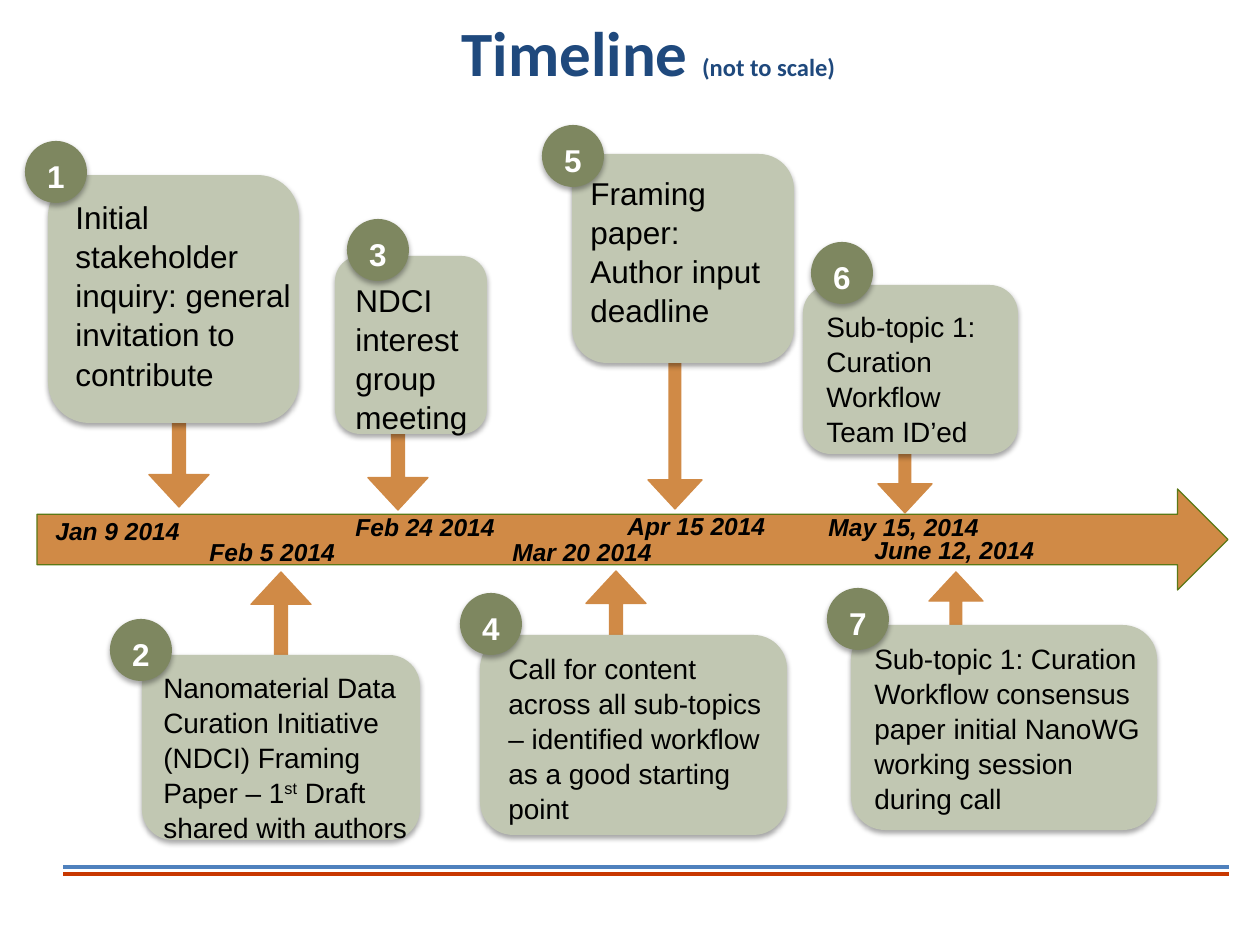
"""Build the project timeline slide."""
from lxml import etree
from pptx import Presentation
from pptx.dml.color import RGBColor
from pptx.enum.shapes import MSO_CONNECTOR, MSO_SHAPE
from pptx.enum.text import MSO_ANCHOR, PP_ALIGN
from pptx.oxml.ns import qn
from pptx.util import Pt

PX = 914400 / 126
DOWN, RIGHT = MSO_SHAPE.DOWN_ARROW, MSO_SHAPE.RIGHT_ARROW
ROUNDED, OVAL = MSO_SHAPE.ROUNDED_RECTANGLE, MSO_SHAPE.OVAL
MIDDLE, CENTER, LEFT = MSO_ANCHOR.MIDDLE, PP_ALIGN.CENTER, PP_ALIGN.LEFT
COLORS = {
    "navy": "1F497D", "blue": "4F81BD", "red": "C83801", "orange": "D08A46",
    "green": "5B7816", "card": "C1C7B2", "badge": "7E8760",
    "black": "000000", "white": "FFFFFF",
}


def add_shape(kind, box, fill, line=None):
    s = shapes.add_shape(kind, *[round(v * PX) for v in box])
    s.shadow.inherit = False
    s.fill.solid()
    s.fill.fore_color.rgb = RGBColor.from_string(COLORS[fill])
    if line:
        s.line.color.rgb = RGBColor.from_string(COLORS[line])
        s.line.width = Pt(0.75)
    else:
        s.line.fill.background()
        effects = s._element.spPr.find(qn("a:effectLst"))
        shadow = etree.SubElement(effects, qn("a:outerShdw"), blurRad="39370",
                                  dist="22860", dir="5400000", rotWithShape="0")
        color = etree.SubElement(shadow, qn("a:srgbClr"), val=COLORS["black"])
        etree.SubElement(color, qn("a:alpha"), val="35000")
    return s


def write(p, runs, size, color="black", bold=False, italic=False, align=LEFT):
    p.alignment = align
    p.line_spacing = 1.04
    for i, text in enumerate(runs):
        r = p.add_run()
        r.text = text
        r.font.name = "Arial"
        r.font.size = Pt(size)
        r.font.bold = bold
        r.font.italic = italic
        r.font.color.rgb = RGBColor.from_string(COLORS[color])
        if i == 1:
            r.font._element.set("baseline", "30000")


prs = Presentation()
prs.slide_width, prs.slide_height = round(1260 * PX), round(945 * PX)
slide = prs.slides.add_slide(prs.slide_layouts[5])
shapes = slide.shapes

for y, color in [(867, "blue"), (874, "red")]:
    s = shapes.add_connector(MSO_CONNECTOR.STRAIGHT, *[round(v * PX) for v in (63, y, 1229, y)])
    s.line.color.rgb = RGBColor.from_string(COLORS[color])
    s.line.width = Pt(2)
    etree.SubElement(s._element.spPr, qn("a:effectLst"))

title = shapes.title
title.left, title.top, title.width, title.height = [round(v * PX) for v in (92, 13, 1113, 76)]
tf = title.text_frame
tf.vertical_anchor = MIDDLE
p = tf.paragraphs[0]
p.alignment = CENTER
for text, size in [("Timeline ", 36), ("(not to scale)", 14)]:
    r = p.add_run()
    r.text = text
    r.font.name = "Calibri"
    r.font.size = Pt(size)
    r.font.bold = True
    r.font.color.rgb = RGBColor.from_string(COLORS["navy"])

add_shape(RIGHT, (37, 489, 1191, 101), "orange", "green")

arrows = [
    (149, 360, 60, 147, False), (251, 572, 60, 147, True),
    (368, 363, 60, 147, False), (586, 571, 60, 147, True),
    (648, 320, 54, 189, False), (878, 324, 54, 189, False),
    (929, 572, 54, 189, True),
]
for *box, points_up in arrows:
    s = add_shape(DOWN, box, "orange", "orange")
    s.adjustments[0], s.adjustments[1] = 0.216, 0.539
    if points_up:
        s._element.spPr.find(qn("a:xfrm")).set("flipV", "1")

cards = [
    ((48, 175, 251, 248), (63, 190, 241, 204), (25, 141), 18,
     [["Initial stakeholder inquiry: general invitation to contribute"]]),
    ((142, 655, 278, 185), (151, 663, 277, 183), (110, 619), 16,
     [["Nanomaterial Data Curation Initiative (NDCI) Framing Paper – 1", "st",
       " Draft shared with authors"]]),
    ((335, 256, 152, 178), (343, 273, 173, 165), (347, 219), 18,
     [["NDCI interest group meeting"]]),
    ((480, 635, 307, 200), (496, 644, 292, 183), (460, 593), 16,
     [["Call for content across all sub-topics – identified workflow as a good starting point"]]),
    ((572, 154, 222, 209), (578, 166, 227, 165), (542, 125), 18,
     [["Framing paper:"], ["Author input deadline"]]),
    ((803, 285, 215, 169), (814, 302, 210, 149), (811, 242), 16,
     [["Sub-topic 1: Curation Workflow Team ID’ed"]]),
    ((851, 625, 306, 205), (862, 634, 300, 217), (827, 588), 16,
     [["Sub-topic 1: Curation Workflow consensus paper initial NanoWG working session during call"]]),
]
for number, (card, text_box, badge, size, paragraphs) in enumerate(cards, 1):
    add_shape(ROUNDED, card, "card")
    tf = shapes.add_textbox(*[round(v * PX) for v in text_box]).text_frame
    tf.word_wrap = True
    for i, runs in enumerate(paragraphs):
        write(tf.add_paragraph() if i else tf.paragraphs[0], runs, size)
    tf = add_shape(OVAL, (*badge, 62, 62), "badge").text_frame
    tf.vertical_anchor = MIDDLE
    tf.margin_top, tf.margin_bottom = round(6 * PX), 0
    write(tf.paragraphs[0], [str(number)], 18, "white", bold=True, align=CENTER)

dates = [
    ("Jan 9 2014", 43, 509, 156), ("Feb 5 2014", 197, 530, 158),
    ("Feb 24 2014", 343, 505, 171), ("Mar 20 2014", 500, 530, 171),
    ("Apr 15 2014", 615, 504, 171), ("May 15, 2014", 816, 505, 183),
    ("June 12, 2014", 862, 528, 193),
]
for date, x, y, width in dates:
    tf = shapes.add_textbox(*[round(v * PX) for v in (x, y, width, 43)]).text_frame
    tf.word_wrap = False
    write(tf.paragraphs[0], [date], 14, bold=True, italic=True)

prs.save("out.pptx")
